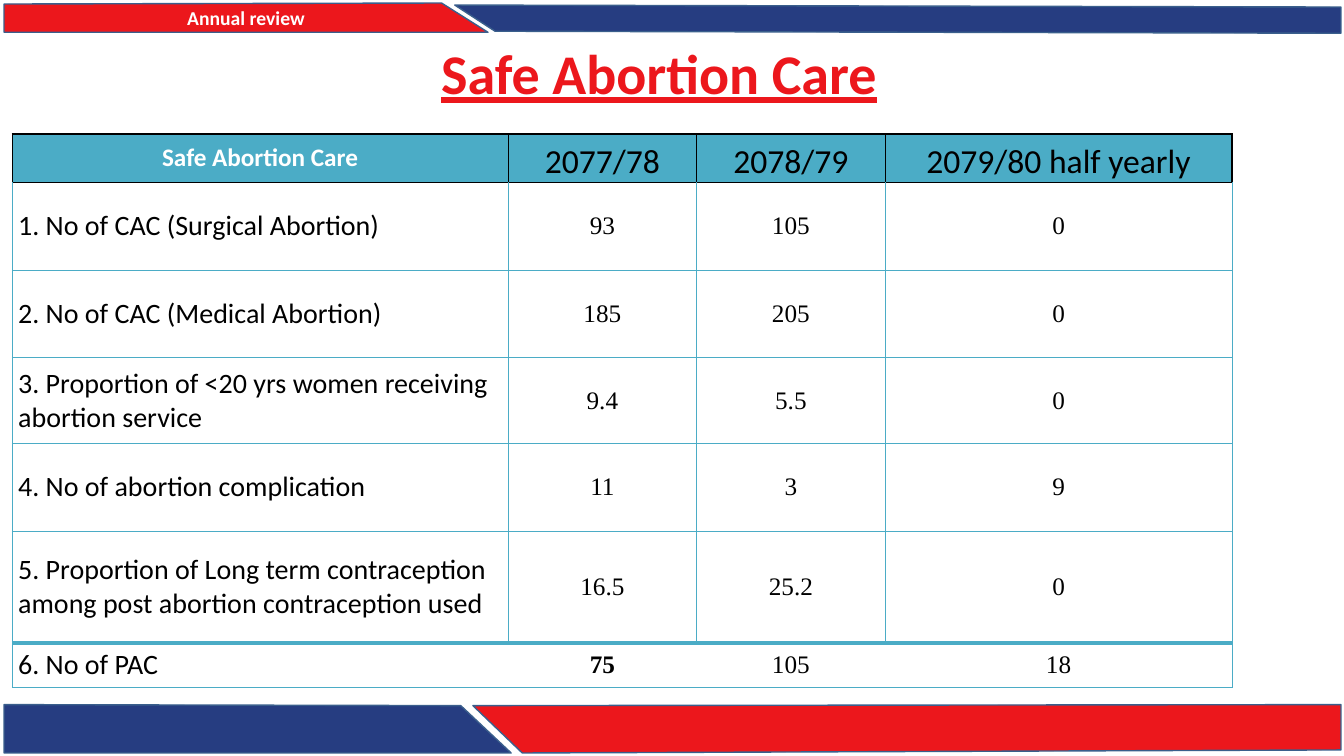
"""Build the Safe Abortion Care slide: a title, a results table and four banner bands."""
import pptx
import pptx.chart.data
import pptx.dml.color
import pptx.enum.text
import pptx.oxml
import pptx.oxml.ns
import pptx.util

PX = 9144
SLIDE_SIZE = (1333, 750)
RED, NAVY, TEAL = "EC171C", "263D81", "4BACC6"
BLACK, WHITE, OUTLINE = "000000", "FFFFFF", "3A5F8C"
SANS, SERIF = "Calibri", "Times New Roman"

TITLE = "Safe Abortion Care"
TITLE_BOX = (15, 17, 1277, 117)
BANDS = [
    (RED, "Annual review", [(4, 4), (438, 3), (484, 32), (4, 32)]),
    (NAVY, "", [(4, 699), (457, 700), (507, 747), (4, 747)]),
    (RED, "", [(469, 700), (1330, 699), (1330, 744), (518, 747)]),
    (NAVY, "", [(451, 5), (1330, 7), (1330, 33), (491, 31)]),
]
TABLE_ORIGIN = (12, 133)
COLUMN_WIDTHS = [492, 187, 187, 344]
ROW_HEIGHTS = [48, 87, 87, 85, 87, 111, 44]
ROWS = [
    ("Safe Abortion Care", "2077/78", "2078/79", "2079/80 half yearly"),
    ("1. No of CAC (Surgical Abortion)", "93", "105", "0"),
    ("2. No of CAC (Medical Abortion)", "185", "205", "0"),
    ("3. Proportion of <20 yrs women receiving abortion service", "9.4", "5.5", "0"),
    ("4. No of abortion complication", "11", "3", "9"),
    ("5. Proportion of Long term contraception among post abortion contraception used",
     "16.5", "25.2", "0"),
    ("6. No of PAC", "75", "105", "18"),
]
LAST_ROW, LAST_COLUMN = len(ROWS) - 1, len(COLUMN_WIDTHS) - 1
CENTER, LEFT = pptx.enum.text.PP_ALIGN.CENTER, pptx.enum.text.PP_ALIGN.LEFT
MIDDLE, BOTTOM = pptx.enum.text.MSO_ANCHOR.MIDDLE, pptx.enum.text.MSO_ANCHOR.BOTTOM


def color(value):
    return pptx.dml.color.RGBColor.from_string(value)


def style(paragraph, size, font_name, hex_color, bold=False, alignment=CENTER):
    paragraph.alignment = alignment
    font = paragraph.font
    font.size, font.name, font.bold = pptx.util.Pt(size), font_name, bold
    font.color.rgb = color(hex_color)


def add_band(slide, fill, text, points):
    builder = slide.shapes.build_freeform(*points[0], scale=PX)
    builder.add_line_segments(points[1:], close=True)
    shape = builder.convert_to_shape()
    shape.shadow.inherit = False
    shape.fill.solid()
    shape.fill.fore_color.rgb = color(fill)
    shape.line.color.rgb = color(OUTLINE)
    shape.line.width = pptx.util.Pt(1)
    if text:
        frame = shape.text_frame
        frame.text, frame.vertical_anchor = text, MIDDLE
        style(frame.paragraphs[0], 14, SANS, WHITE, bold=True)


def set_border(cell, side, line):
    namespace = pptx.oxml.ns.nsdecls("a")
    if line:
        hex_color, points = line
        xml = (f'<a:ln{side} {namespace} w="{pptx.util.Pt(points)}"><a:solidFill>'
               f'<a:srgbClr val="{hex_color}"/></a:solidFill></a:ln{side}>')
    else:
        xml = f'<a:ln{side} {namespace} w="0"><a:noFill/></a:ln{side}>'
    cell._tc.get_or_add_tcPr().append(pptx.oxml.parse_xml(xml))


def cell_borders(row, column):
    if row == 0:
        return dict.fromkeys("LRTB", (BLACK, 1))
    borders = dict.fromkeys("LRTB", (TEAL, 0.5))
    if row == 1:
        borders["T"] = (BLACK, 1)
    if row == LAST_ROW - 1:
        borders["B"] = (TEAL, 4)
    if row == LAST_ROW:
        borders["T"] = (TEAL, 4)
        if column > 0:
            borders["L"] = None
        if column < LAST_COLUMN:
            borders["R"] = None
    return borders


def fill_cell(cell, row, column, text):
    for side, line in cell_borders(row, column).items():
        set_border(cell, side, line)
    year_heading = row == 0 and column > 0
    side_margin, top_margin = (1, 1) if year_heading else (6, 0)
    cell.margin_left = cell.margin_right = side_margin * PX
    cell.margin_top, cell.margin_bottom = top_margin * PX, 0
    cell.vertical_anchor = BOTTOM if year_heading else MIDDLE
    cell.text = text
    paragraph = cell.text_frame.paragraphs[0]
    if year_heading:
        style(paragraph, 24, SANS, BLACK)
    elif row == 0:
        style(paragraph, 18, SANS, WHITE, bold=True)
    elif column == 0:
        style(paragraph, 20, SANS, BLACK, alignment=LEFT)
    else:
        style(paragraph, 18, SERIF, BLACK, bold=(row, column) == (LAST_ROW, 1))
    if row == 0:
        cell.fill.solid()
        cell.fill.fore_color.rgb = color(TEAL)
    else:
        cell.fill.background()


def add_results_table(slide):
    box = (*TABLE_ORIGIN, sum(COLUMN_WIDTHS), sum(ROW_HEIGHTS))
    table = slide.shapes.add_table(
        len(ROWS), len(COLUMN_WIDTHS), *(length * PX for length in box)).table
    table.first_row = table.horz_banding = False
    for column, width in zip(table.columns, COLUMN_WIDTHS):
        column.width = width * PX
    for row, height in zip(table.rows, ROW_HEIGHTS):
        row.height = height * PX
    for row, texts in enumerate(ROWS):
        for column, text in enumerate(texts):
            fill_cell(table.cell(row, column), row, column, text)


def add_title(slide):
    title = slide.shapes.title
    title.left, title.top, title.width, title.height = (length * PX for length in TITLE_BOX)
    title.text_frame.text = TITLE
    title.text_frame.vertical_anchor = MIDDLE
    paragraph = title.text_frame.paragraphs[0]
    paragraph.line_spacing = 0.9
    style(paragraph, 40, SANS, RED, bold=True)
    paragraph.font.underline = True


def main():
    presentation = pptx.Presentation()
    presentation.slide_width, presentation.slide_height = (length * PX for length in SLIDE_SIZE)
    slide = presentation.slides.add_slide(presentation.slide_layouts[5])
    for band in BANDS:
        add_band(slide, *band)
    add_title(slide)
    add_results_table(slide)
    presentation.save("out.pptx")


if __name__ == "__main__":
    main()
